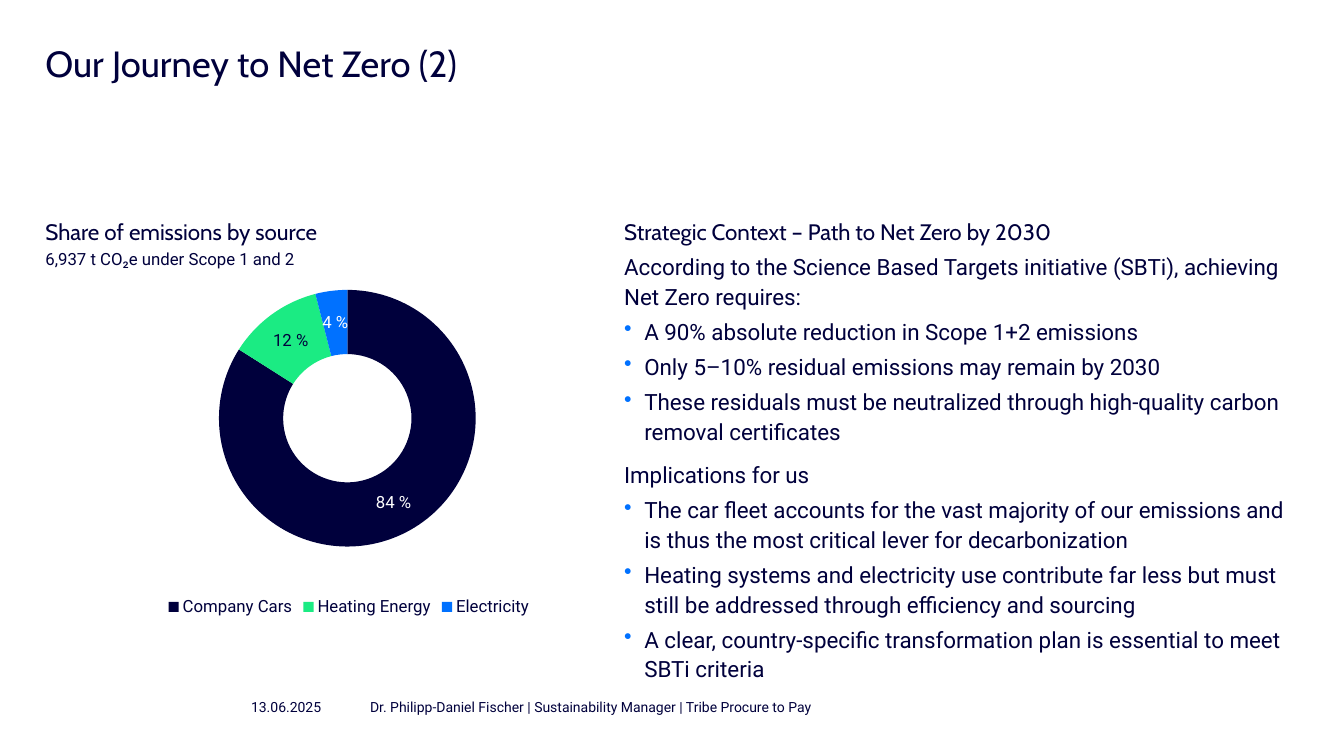
from lxml import etree
from pptx import Presentation, util as u
from pptx.chart.data import CategoryChartData
from pptx.dml.color import RGBColor
from pptx.enum import chart as ch, text
from pptx.oxml import ns

NAVY, GREEN, BLUE, WHITE = "00003C", "1BEB83", "0071FF", "FFFFFF"
HEAD, BODY = "Cabin", "Roboto"
PERCENT = "0\\ %"

STRATEGY = [
    ("According to the Science Based Targets initiative (SBTi), achieving Net Zero requires:", [
        "A 90% absolute reduction in Scope 1+2 emissions",
        "Only 5–10% residual emissions may remain by 2030",
        "These residuals must be neutralized through high-quality carbon removal certificates"]),
    ("Implications for us", [
        "The car fleet accounts for the vast majority of our emissions and is thus the most "
        "critical lever for decarbonization",
        "Heating systems and electricity use contribute far less but must still be addressed "
        "through efficiency and sourcing",
        "A clear, country-specific transformation plan is essential to meet SBTi criteria"]),
]
SHARES = [("Company Cars", 0.84, NAVY), ("Heating Energy", 0.12, GREEN), ("Electricity", 0.04, BLUE)]


def rgb(value):
    return RGBColor.from_string(value)


def apply(target, values):
    for name, value in values.items():
        setattr(target, name, value)


def set_font(font, size, name=BODY, color=NAVY):
    apply(font, dict(size=u.Pt(size), name=name))
    font.color.rgb = rgb(color)


def set_frame(tf, anchor=text.MSO_ANCHOR.TOP):
    apply(tf, dict(margin_left=0, margin_right=0, margin_top=0, margin_bottom=0, word_wrap=True,
                   auto_size=text.MSO_AUTO_SIZE.NONE, vertical_anchor=anchor))


def add_box(s, box, anchor=text.MSO_ANCHOR.TOP):
    tf = s.shapes.add_textbox(*map(u.Inches, box)).text_frame
    set_frame(tf, anchor)
    return tf


def write(p, words, size, name=BODY, **spacing):
    apply(p, spacing)
    r = p.add_run()
    r.text = words
    set_font(r.font, size, name)


def add_bullet(p):
    pPr = p._p.get_or_add_pPr()
    pPr.set("marL", str(u.Inches(0.2)))
    pPr.set("indent", str(-u.Inches(0.2)))
    color = etree.SubElement(pPr, ns.qn("a:buClr"))
    etree.SubElement(color, ns.qn("a:srgbClr"), val=BLUE)
    etree.SubElement(pPr, ns.qn("a:buChar"), char="•")


def add_title(s, box):
    sp = s.shapes.title
    apply(sp, dict(zip(("left", "top", "width", "height"), map(u.Inches, box))))
    set_frame(sp.text_frame)
    write(sp.text_frame.paragraphs[0], "Our Journey to Net Zero (2)", 26, HEAD,
          line_spacing=0.95, alignment=text.PP_ALIGN.LEFT)


def add_doughnut(s, box):
    data = CategoryChartData(number_format=PERCENT)
    data.categories = [name for name, _, _ in SHARES]
    data.add_series("Series 1", [share for _, share, _ in SHARES])
    chart = s.shapes.add_chart(ch.XL_CHART_TYPE.DOUGHNUT, *map(u.Inches, box), data).chart
    set_font(chart.font, 12)
    apply(chart, dict(has_title=False, has_legend=True))
    apply(chart.legend, dict(position=ch.XL_LEGEND_POSITION.BOTTOM, include_in_layout=False))
    set_font(chart.legend.font, 12)

    plot = chart.plots[0]
    plot.vary_by_categories = True
    plot._element.find(ns.qn("c:holeSize")).set("val", "60")
    series = plot.series[0]
    for i, (_, _, color) in enumerate(SHARES):
        fill = series.points[i].format.fill
        fill.solid()
        fill.fore_color.rgb = rgb(color)

    # Share labels, dark on the green segment
    labels = series.data_labels
    apply(labels, dict(show_value=True, show_percentage=False, show_category_name=False,
                       show_legend_key=False, number_format=PERCENT, number_format_is_linked=False))
    set_font(labels.font, 12, color=WHITE)
    set_font(series.points[1].data_label.font, 12)
    label = labels._element.find(ns.qn("c:dLbl"))
    number = etree.Element(ns.qn("c:numFmt"), formatCode=PERCENT, sourceLinked="0")
    label.insert(1, number)

    # Ring position inside the chart
    area = chart._chartSpace.chart.plotArea
    for old in area.findall(ns.qn("c:layout")):
        area.remove(old)
    layout = etree.Element(ns.qn("c:layout"))
    manual = etree.SubElement(layout, ns.qn("c:manualLayout"))
    for tag, value in (("layoutTarget", "inner"), ("xMode", "edge"), ("yMode", "edge"),
                       ("x", "0.286"), ("y", "0.031"), ("w", "0.423"), ("h", "0.752")):
        etree.SubElement(manual, ns.qn("c:" + tag), val=value)
    area.insert(0, layout)


def add_emissions(s, box):
    x, y, w, h = box
    write(add_box(s, (x, y, w, 0.29)).paragraphs[0], "Share of emissions by source", 16, HEAD,
          line_spacing=1.1)
    write(add_box(s, (x, y + 0.31, w, 0.22)).paragraphs[0], "6,937 t CO₂e under Scope 1 and 2", 12,
          line_spacing=1.1)
    add_doughnut(s, (x, y + 0.63, w, h - 0.63))


def add_strategy(s, box):
    tf = add_box(s, box)
    write(tf.paragraphs[0], "Strategic Context – Path to Net Zero by 2030", 16, HEAD, line_spacing=1.1)
    spacing = dict(line_spacing=1.1, space_before=u.Pt(4))
    for intro, points in STRATEGY:
        write(tf.add_paragraph(), intro, 16, **spacing)
        for point in points:
            p = tf.add_paragraph()
            add_bullet(p)
            write(p, point, 16, **spacing)
        if intro != STRATEGY[-1][0]:
            p.space_after = u.Pt(6)


def add_footer(s, box):
    x, y, w, h = box
    date_w, gap = 0.79, 0.39
    speaker_x = date_w + gap
    for left, width, words in (
            (x, date_w, "13.06.2025"),
            (x + speaker_x, w - speaker_x,
             "Dr. Philipp-Daniel Fischer | Sustainability Manager | Tribe Procure to Pay")):
        write(add_box(s, (left, y, width, h), text.MSO_ANCHOR.MIDDLE).paragraphs[0], words, 10)


def main():
    prs = Presentation()
    apply(prs, dict(slide_width=u.Inches(13.33), slide_height=u.Inches(7.5)))
    s = prs.slides.add_slide(prs.slide_layouts[5])
    add_title(s, (0.45, 0.44, 12.44, 0.42))
    add_emissions(s, (0.45, 2.14, 6.02, 4.02))
    add_strategy(s, (6.19, 2.14, 6.69, 4.8))
    add_footer(s, (2.49, 6.93, 7.56, 0.17))
    prs.save("out.pptx")


if __name__ == "__main__":
    main()
